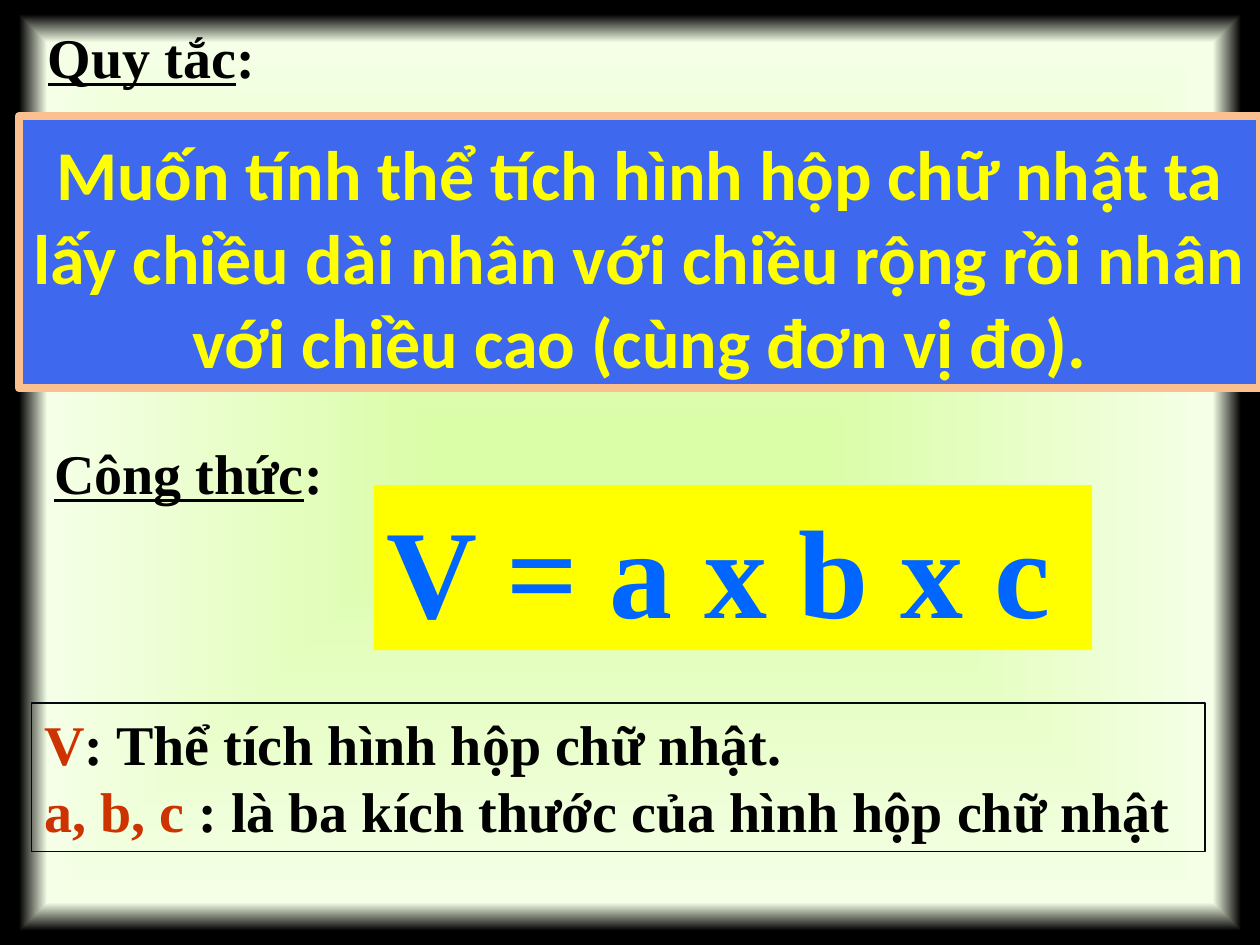
"""Build a slide with the rule and formula for the volume of a cuboid."""
from lxml.etree import SubElement
from pptx import Presentation
from pptx.dml.color import RGBColor
from pptx.enum.shapes import MSO_SHAPE
from pptx.enum.text import MSO_ANCHOR, MSO_AUTO_SIZE, PP_ALIGN
from pptx.oxml import parse_xml
from pptx.oxml.ns import nsdecls, qn
from pptx.util import Cm, Pt

COLOURS = {
    "black": "000000", "blue": "0066FF", "yellow": "FFFF00", "red": "CC3300",
    "panel": "3E68EE", "peach": "FAC090", "frame": "000810",
    "green": "DAFDA7", "pale": "F5FFE7",
}
SERIF = {"name": "Times New Roman", "size": Pt(32), "bold": True}
FORMULA = {**SERIF, "size": Pt(72)}
RULE = {"name": "Calibri", "size": Pt(40), "bold": True}
UNDERLINED = {**SERIF, "underline": True}
FRAME = {"auto_size": MSO_AUTO_SIZE.NONE, "word_wrap": True,
         "vertical_anchor": MSO_ANCHOR.TOP}


def rgb(colour):
    return RGBColor.from_string(COLOURS[colour])


def apply(target, values):
    for name, value in values.items():
        setattr(target, name, value)


def place(box, left, top, width, height):
    apply(box, {"left": Cm(left), "top": Cm(top),
                "width": Cm(width), "height": Cm(height)})


def outline(box, colour, weight):
    box.line.color.rgb = rgb(colour)
    box.line.width = Pt(weight)


def write(box, lines, align=PP_ALIGN.LEFT, **frame):
    apply(box.text_frame, {**FRAME, **frame})
    for index, parts in enumerate(lines):
        paragraph = (box.text_frame.add_paragraph() if index
                     else box.text_frame.paragraphs[0])
        apply(paragraph, {"alignment": align, "space_before": Pt(0)})
        for text, values, colour in parts:
            run = paragraph.add_run()
            run.text = text
            apply(run.font, values)
            run.font.color.rgb = rgb(colour)


def write_heading(box, label, **frame):
    write(box, [[(label, UNDERLINED, "black"), (":", SERIF, "black")]], **frame)


def add_panel(slide, bounds, fill):
    panel = slide.shapes.add_shape(MSO_SHAPE.RECTANGLE, *map(Cm, bounds))
    panel.shadow.inherit = False
    panel.fill.solid()
    panel.fill.fore_color.rgb = rgb(fill)
    panel.line.fill.background()
    return panel


def remove_bullets(box):
    for paragraph in box.text_frame.paragraphs:
        properties = paragraph._p.get_or_add_pPr()
        properties.set("marL", "0")
        properties.set("indent", "0")
        SubElement(properties, qn("a:buNone"))


def set_background(slide):
    stops = [(8, "green", 100), (91, "pale", 100), (97, "black", 0)]
    stop_xml = "".join(
        f'<a:gs pos="{position * 1000}"><a:srgbClr val="{COLOURS[colour]}">'
        f'<a:alpha val="{opacity * 1000}"/></a:srgbClr></a:gs>'
        for position, colour, opacity in stops)
    slide.element.cSld.insert(0, parse_xml(
        f'<p:bg {nsdecls("p", "a")}><p:bgPr><a:gradFill rotWithShape="1">'
        f'<a:gsLst>{stop_xml}</a:gsLst><a:path path="shape">'
        '<a:fillToRect l="50000" t="50000" r="50000" b="50000"/></a:path>'
        '</a:gradFill><a:effectLst/></p:bgPr></p:bg>'))


def main():
    presentation = Presentation()
    presentation.slide_width, presentation.slide_height = Cm(25.4), Cm(19.05)
    slide = presentation.slides.add_slide(presentation.slide_layouts[1])
    set_background(slide)
    rule_heading, legend = slide.placeholders

    formula = add_panel(slide, (7.54, 9.78, 14.48, 3.33), "yellow")
    write(formula, [[("V = a x b x c", FORMULA, "blue")]],
          vertical_anchor=MSO_ANCHOR.BOTTOM)

    place(legend, 0.64, 14.17, 23.65, 3)
    outline(legend, "frame", 0.75)
    write(legend, [
        [("V", SERIF, "red"), (": Thể tích hình hộp chữ nhật.", SERIF, "black")],
        [("a, b, c ", SERIF, "red"),
         (": là ba kích thước của hình hộp chữ nhật", SERIF, "black")],
    ])
    remove_bullets(legend)

    rule = add_panel(slide, (0.38, 2.34, 25.02, 5.49), "panel")
    outline(rule, "peach", 4.5)
    write(rule, [[(
        "Muốn tính thể tích hình hộp chữ nhật ta lấy chiều dài nhân với "
        "chiều rộng rồi nhân với chiều cao (cùng đơn vị đo).", RULE, "yellow")]],
        align=PP_ALIGN.CENTER, vertical_anchor=MSO_ANCHOR.BOTTOM)

    place(rule_heading, 0.71, 0.33, 6.5, 1.63)
    write_heading(rule_heading, "Quy tắc")
    formula_heading = slide.shapes.add_textbox(Cm(0.84), Cm(8.71), Cm(6.27), Cm(1.63))
    write_heading(formula_heading, "Công thức", word_wrap=False)

    presentation.save("out.pptx")


if __name__ == "__main__":
    main()
